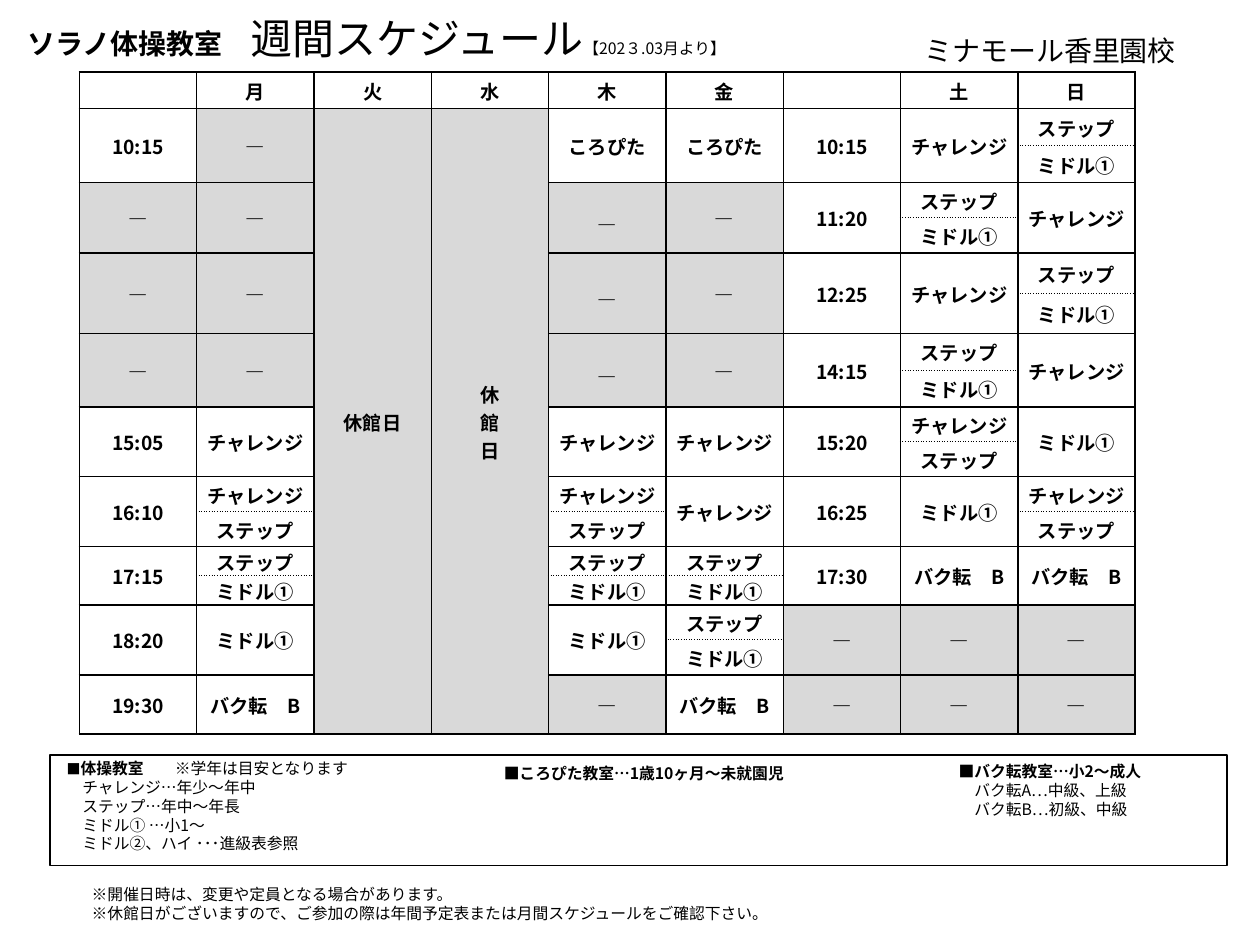
from lxml import etree
from pptx import Presentation
from pptx import util as u
from pptx.dml.color import RGBColor
from pptx.enum import shapes, text
from pptx.oxml.ns import qn

COLORS = {"ink": "000000", "open": "FFFFFF", "closed": "D9D9D9"}
FONT = "Noto Sans CJK JP"
UNIT = 0.1  # the slide is a grid of 100 columns by 75 rows


def length(units):
    return u.Inches(units * UNIT)


def rgb(name):
    return RGBColor.from_string(COLORS[name])


def write(p, content, size=9, bold=False, font=FONT):
    """Add a run of formatted text to a paragraph."""
    r = p.add_run()
    r.text = content
    r.font.size, r.font.bold, r.font.name = u.Pt(size), bold, font
    r.font.color.rgb = rgb("ink")
    etree.SubElement(r.font._element, qn("a:ea")).set("typeface", FONT)
    return r


class Schedule:
    def __init__(self, prs):
        self.s = prs.slides.add_slide(prs.slide_layouts[6])

    def text_box(self, at, lines, indent=0, tab=None):
        """Each line is a list of (text, format); later lines are indented."""
        tf = self.s.shapes.add_textbox(*map(length, at)).text_frame
        tf.word_wrap = True
        tf.auto_size = text.MSO_AUTO_SIZE.SHAPE_TO_FIT_TEXT
        for i, line in enumerate(lines):
            p = tf.add_paragraph() if i else tf.paragraphs[0]
            pPr = p._p.get_or_add_pPr()
            if i and indent:
                pPr.set("marL", str(length(indent)))
            elif tab:
                stops = etree.SubElement(pPr, qn("a:tabLst"))
                etree.SubElement(stops, qn("a:tab"), pos=str(length(tab)), algn="l")
            for content, style in line:
                write(p, content, **style)

    def frame(self, at):
        sp = self.s.shapes.add_shape(shapes.MSO_SHAPE.RECTANGLE, *map(length, at))
        sp.shadow.inherit = False
        sp.fill.background()
        sp.line.color.rgb, sp.line.width = rgb("ink"), u.Pt(1)

    def table(self, at, heights, columns):
        left, top, width = at
        shape = self.s.shapes.add_table(
            len(heights), columns, length(left), length(top),
            length(width), length(sum(heights)))
        tbl = shape.table
        for col in tbl.columns:
            col.width = length(width / columns)
        for row, height in zip(tbl.rows, heights):
            row.height = length(height)
        for cell in tbl.iter_cells():
            cell.margin_left = cell.margin_top = cell.margin_right = u.Inches(0.01)
            cell.margin_bottom = 0
            cell.vertical_anchor = text.MSO_ANCHOR.MIDDLE
            # Keeps empty cells from stretching their row
            etree.SubElement(cell.text_frame.paragraphs[0]._p, qn("a:endParaRPr"), sz="1100")
            self.borders(cell)
            self.shade(cell, "open")
        return tbl

    def borders(self, cell, dotted=None):
        tcPr = cell._tc.get_or_add_tcPr()
        for i, side in enumerate(("lnL", "lnR", "lnT", "lnB")):
            for old in tcPr.findall(qn("a:" + side)):
                tcPr.remove(old)
            dot = side == dotted
            ln = etree.Element(qn("a:" + side), w=str(u.Pt(0.5 if dot else 1)))
            fill = etree.SubElement(ln, qn("a:solidFill"))
            etree.SubElement(fill, qn("a:srgbClr"), val=COLORS["ink"])
            etree.SubElement(ln, qn("a:prstDash"), val="dot" if dot else "solid")
            tcPr.insert(i, ln)

    def shade(self, cell, color):
        cell.fill.solid()
        cell.fill.fore_color.rgb = rgb(color)

    def fill_cell(self, cell, lines, color="open"):
        tf = cell.text_frame
        for i, line in enumerate(lines):
            p = tf.add_paragraph() if i else tf.paragraphs[0]
            p.alignment = text.PP_ALIGN.CENTER
            write(p, line, size=11, bold=True)
        self.shade(cell, color)


# Timetable: "/" splits a slot in two, "―" is a slot with no class
DAYS = ["", "月", "火", "水", "木", "金", "", "土", "日"]
OPEN_COLUMNS = [0, 1, 4, 5, 6, 7, 8]
THURSDAY = 4
TODDLER = "ころぴた"
C, S, M, B, X = "チャレンジ", "ステップ", "ミドル①", "バク転　B", "―"
SM, CS = f"{S}/{M}", f"{C}/{S}"
SLOTS = [  # height of half a slot, then one entry for each open column
    (2.92, ["10:15", X, TODDLER, TODDLER, "10:15", C, SM]),
    (2.8, [X, X, X, X, "11:20", SM, C]),
    (3.2, [X, X, X, X, "12:25", C, SM]),
    (2.92, [X, X, X, X, "14:15", SM, C]),
    (2.77, ["15:05", C, C, C, "15:20", CS, M]),
    (2.77, ["16:10", CS, CS, C, "16:25", M, CS]),
    (2.32, ["17:15", SM, SM, SM, "17:30", B, B]),
    (2.78, ["18:20", M, M, SM, X, X, X]),
]
LAST_SLOT = (4.68, ["19:30", B, X, B, X, X, X])


def add_timetable(page):
    heights = [2.93] + [h for h, _ in SLOTS for _ in range(2)] + [LAST_SLOT[0]]
    tbl = page.table((6.3, 5.7, 83.8), heights, len(DAYS))
    last = len(heights) - 1
    for col, day in enumerate(DAYS):
        if day:
            page.fill_cell(tbl.cell(0, col), [day])

    # Closed days
    for col, lines in ((2, ["休館日"]), (3, list("休館日"))):
        cell = tbl.cell(1, col)
        cell.merge(tbl.cell(last, col))
        page.fill_cell(cell, lines, "closed")
    tbl.cell(1, 2)._tc.get_or_add_tcPr().set("vert", "eaVert")

    # Classes
    for i, (_, entries) in enumerate(SLOTS + [LAST_SLOT]):
        row = 1 + 2 * i
        for col, entry in zip(OPEN_COLUMNS, entries):
            cell = tbl.cell(row, col)
            if "/" in entry:
                lower = tbl.cell(row + 1, col)
                for half, name, side in zip((cell, lower), entry.split("/"), ("lnB", "lnT")):
                    page.fill_cell(half, [name])
                    page.borders(half, dotted=side)
                continue
            if row < last:
                cell.merge(tbl.cell(row + 1, col))
            page.fill_cell(cell, [entry], "closed" if entry == X else "open")
            if entry == X and col == THURSDAY and row < last:
                cell.margin_top = u.Inches(0.1)


def main():
    prs = Presentation()
    prs.slide_width, prs.slide_height = length(100), length(75)
    page = Schedule(prs)
    bold, plain = {"bold": True}, {}

    # Heading
    page.text_box((1.2, 0.5, 65.4, 5), [[
        ("ソラノ体操教室　", {"size": 16, "bold": True}),
        ("週間スケジュール", {"size": 24}),
        ("【202３.03月より】", plain)]])
    page.text_box((72.4, 2.2, 22.1, 3.7),
                  [[("ミナモール香里園校", {"size": 16, "font": "Calibri"})]])

    add_timetable(page)

    # Class guide
    page.frame((4, 59.9, 93.4, 8.8))
    page.text_box((4.3, 59.7, 28.7, 8.6), [
        [("■", {"size": 8, "bold": True}), ("体操教室\t", bold), ("※学年は目安となります", plain)],
        [("チャレンジ…年少～年中", plain)],
        [("ステップ…年中～年長", plain)],
        [("ミドル① …小1～", plain)],
        [("ミドル②、ハイ ･･･進級表参照", plain)]], indent=1.25, tab=8.6)
    page.text_box((39, 60.1, 24.4, 5.6), [[(f"■{TODDLER}教室…1歳10ヶ月～未就園児", bold)]])
    page.text_box((75.1, 60, 30, 5.6), [
        [("■バク転教室…小2～成人", bold)],
        [("バク転A…中級、上級", plain)],
        [("バク転B…初級、中級", plain)]], indent=1.25)

    # Notes
    page.text_box((6.3, 69.7, 68.7, 4), [
        [("※開催日時は、変更や定員となる場合があります。", plain)],
        [("※休館日がございますので、ご参加の際は年間予定表または月間スケジュールをご確認下さい。", plain)]])

    prs.save("out.pptx")


if __name__ == "__main__":
    main()
